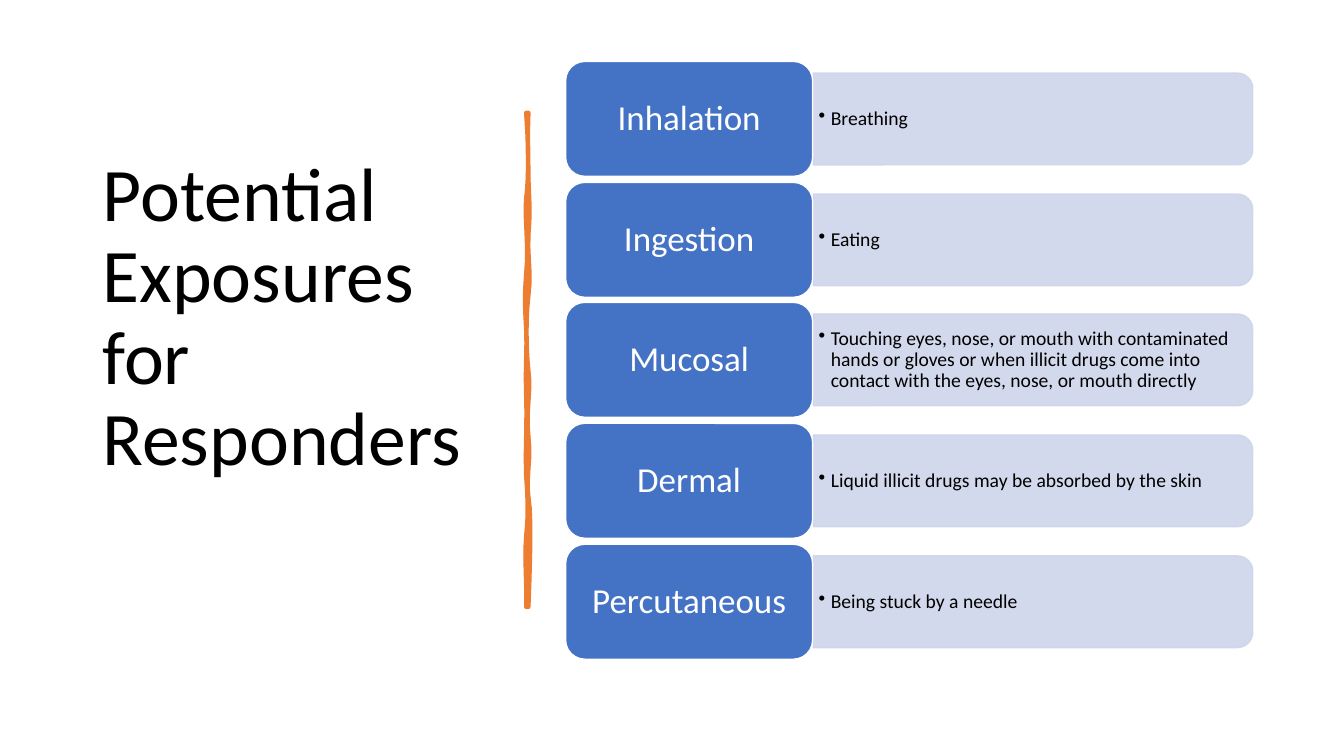
from pptx import Presentation
from pptx.dml.color import RGBColor
from pptx.enum.shapes import MSO_SHAPE
from pptx.enum.text import MSO_ANCHOR, PP_ALIGN
from pptx.oxml.ns import qn
from pptx.util import Pt
from lxml import etree

PX = 9144  # EMU per px, 100 px to the inch
BLACK = RGBColor(0x00, 0x00, 0x00)
WHITE = RGBColor(0xFF, 0xFF, 0xFF)
BLUE = RGBColor(0x44, 0x72, 0xC4)
PALE_BLUE = RGBColor(0xCF, 0xD5, 0xEA)
ORANGE = RGBColor(0xED, 0x7D, 0x31)

LABEL_LEFT, LABEL_WIDTH, LABEL_HEIGHT = 561, 245, 114
FIRST_TOP, LAST_TOP = 61, 540
BAR_LEFT, BAR_WIDTH, BAR_HEIGHT = LABEL_LEFT + LABEL_WIDTH, 436, 91

EXPOSURES = [
    ("Inhalation", "Breathing"),
    ("Ingestion", "Eating"),
    ("Mucosal", "Touching eyes, nose, or mouth with contaminated hands or gloves or "
                "when illicit drugs come into contact with the eyes, nose, or mouth directly"),
    ("Dermal", "Liquid illicit drugs may be absorbed by the skin"),
    ("Percutaneous", "Being stuck by a needle"),
]

# Brush stroke: each row is two control points and the end of a Bézier curve.
STROKE_START = (524, 112)
STROKE_CURVES = [
    (523, 142, 524, 149, 524, 177),
    (525, 206, 526, 207, 524, 233),
    (523, 259, 527, 269, 524, 293),
    (521, 317, 522, 350, 524, 368),
    (527, 386, 521, 410, 524, 433),
    (527, 456, 521, 476, 524, 493),
    (527, 511, 526, 551, 524, 602),
    (523, 602, 523, 602, 522, 602),
    (523, 584, 520, 553, 522, 532),
    (524, 512, 524, 500, 522, 472),
    (521, 444, 523, 422, 522, 392),
    (521, 363, 523, 347, 522, 327),
    (521, 307, 520, 297, 522, 272),
    (525, 247, 520, 212, 522, 197),
    (524, 182, 525, 152, 522, 112),
]
STEPS = 6


def write(box, text, size, color, align=PP_ALIGN.LEFT, margins=(10, 5, 10, 5), bullet=False):
    """Fill the box with one paragraph; margins are left, top, right, bottom in px."""
    frame = box.text_frame
    frame.word_wrap = True
    frame.vertical_anchor = MSO_ANCHOR.MIDDLE
    frame.margin_left, frame.margin_top, frame.margin_right, frame.margin_bottom = (
        margin * PX for margin in margins)
    para = frame.paragraphs[0]
    para.alignment = align
    para.line_spacing = 0.9
    span = para.add_run()
    span.text = text
    span.font.name = "Calibri"
    span.font.size = Pt(size)
    span.font.color.rgb = color
    if bullet:
        properties = para._p.get_or_add_pPr()
        properties.set("marL", str(12 * PX))
        properties.set("indent", str(-12 * PX))
        etree.SubElement(properties, qn("a:buChar")).set("char", "•")


def paint(shape, fill, line, width):
    shape.shadow.inherit = False
    shape.fill.solid()
    shape.fill.fore_color.rgb = fill
    shape.line.color.rgb = line
    shape.line.width = Pt(width)


deck = Presentation()
deck.slide_width, deck.slide_height = 1333 * PX, 750 * PX
page = deck.slides.add_slide(deck.slide_layouts[6])

title = page.shapes.add_textbox(92 * PX, 60 * PX, 394 * PX, 594 * PX)
write(title, "Potential Exposures for Responders", 54, BLACK, margins=(10, 5, 10, 86))

points = []
start_x, start_y = STROKE_START
for x1, y1, x2, y2, end_x, end_y in STROKE_CURVES:
    for step in range(1, STEPS + 1):
        t = step / STEPS
        weights = ((1 - t) ** 3, 3 * t * (1 - t) ** 2, 3 * t ** 2 * (1 - t), t ** 3)
        x = sum(w * v for w, v in zip(weights, (start_x, x1, x2, end_x)))
        y = sum(w * v for w, v in zip(weights, (start_y, y1, y2, end_y)))
        points.append((round(x * PX), round(y * PX)))
    start_x, start_y = end_x, end_y
builder = page.shapes.build_freeform(STROKE_START[0] * PX, STROKE_START[1] * PX)
builder.add_line_segments(points, close=True)
stroke = builder.convert_to_shape()
paint(stroke, ORANGE, ORANGE, 3.25)
etree.SubElement(stroke.line._get_or_add_ln(), qn("a:round"))

pitch = (LAST_TOP - FIRST_TOP) / (len(EXPOSURES) - 1)
for row, (name, detail) in enumerate(EXPOSURES):
    top = round(FIRST_TOP + row * pitch)
    middle = top + LABEL_HEIGHT // 2

    # The bar stands upright and is turned so that its rounded end faces right.
    bar = page.shapes.add_shape(
        MSO_SHAPE.ROUND_2_SAME_RECTANGLE,
        (BAR_LEFT + BAR_WIDTH // 2 - BAR_HEIGHT // 2) * PX, (middle - BAR_WIDTH // 2) * PX,
        BAR_HEIGHT * PX, BAR_WIDTH * PX)
    bar.rotation = 90
    paint(bar, PALE_BLUE, PALE_BLUE, 1)
    for color in bar._element.spPr.iter(qn("a:srgbClr")):
        etree.SubElement(color, qn("a:alpha")).set("val", "90000")

    detail_box = page.shapes.add_textbox(BAR_LEFT * PX, (middle - 41) * PX, 431 * PX, 82 * PX)
    write(detail_box, detail, 14, BLACK, margins=(6, 3, 6, 3), bullet=True)

    label = page.shapes.add_shape(MSO_SHAPE.ROUNDED_RECTANGLE, LABEL_LEFT * PX, top * PX,
                                  LABEL_WIDTH * PX, LABEL_HEIGHT * PX)
    paint(label, BLUE, WHITE, 1)
    write(label, name, 25, WHITE, align=PP_ALIGN.CENTER)

deck.save("out.pptx")
